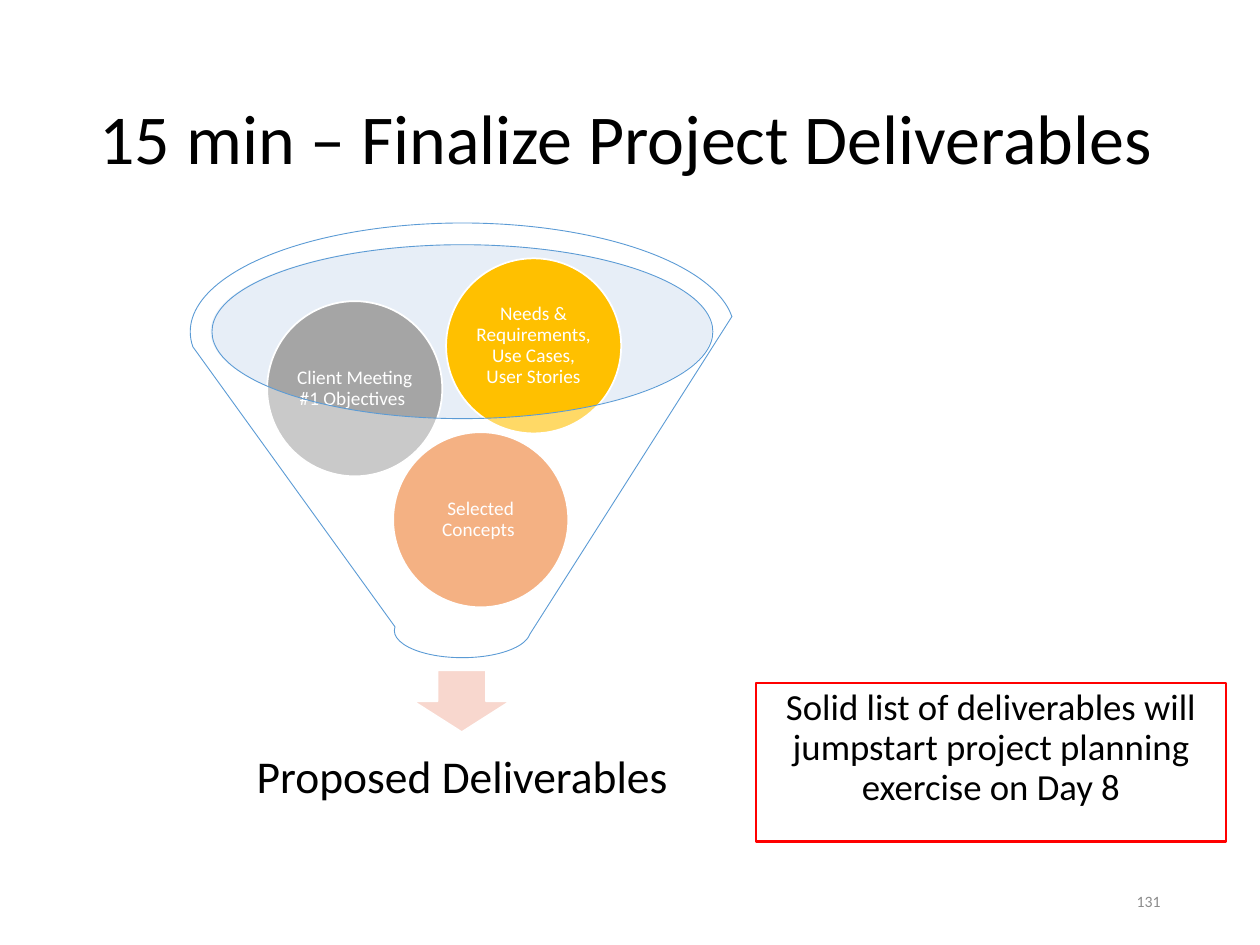
import dataclasses
import typing

import pptx
import pptx.dml.color
import pptx.enum.shapes
import pptx.enum.text
import pptx.oxml.ns
import pptx.util
from lxml import etree

Inches = pptx.util.Inches
Pt = pptx.util.Pt
RGBColor = pptx.dml.color.RGBColor
Shapes = pptx.enum.shapes.MSO_SHAPE
Align = pptx.enum.text.PP_ALIGN
Anchor = pptx.enum.text.MSO_ANCHOR
qn = pptx.oxml.ns.qn

BLACK = RGBColor(0x00, 0x00, 0x00)
WHITE = RGBColor(0xFF, 0xFF, 0xFF)
RED = RGBColor(0xFF, 0x00, 0x00)
GRAY = RGBColor(0xA5, 0xA5, 0xA5)
NUMBER_GRAY = RGBColor(0x8C, 0x8C, 0x8C)
ORANGE = RGBColor(0xED, 0x7D, 0x31)
GOLD = RGBColor(0xFF, 0xC0, 0x00)
PINK = RGBColor(0xF8, 0xD7, 0xCE)
PALE_BLUE = RGBColor(0xC4, 0xD5, 0xEB)
BLUE = RGBColor(0x5B, 0x9B, 0xD5)

CIRCLE_SIZE = 1.39
FUNNEL_OPACITY = 40


@dataclasses.dataclass(frozen=True)
class Area:
    left: float
    top: float
    width: float
    height: float


@dataclasses.dataclass(frozen=True)
class Circle:
    left: float
    top: float
    color: RGBColor
    text: str


CIRCLES = [
    Circle(3.12, 3.43, ORANGE, "Selected Concepts "),
    Circle(2.12, 2.39, GRAY, "Client Meeting #1 Objectives "),
    Circle(3.54, 2.05, GOLD, "Needs & Requirements, Use Cases, User Stories"),
]


def apply(target: typing.Any, formats: dict) -> None:
    for name, value in formats.items():
        setattr(target, name, value)


def place(shape, area: Area) -> None:
    apply(shape, {name: Inches(value) for name, value in dataclasses.asdict(area).items()})


def write(shape, text: str, size: float, color: RGBColor, alignment=Align.CENTER,
          anchor=Anchor.MIDDLE, inset: typing.Optional[float] = None,
          spacing: float = 0.9, before: float = 0) -> None:
    frame = shape.text_frame
    apply(frame, {
        "word_wrap": True,
        "auto_size": pptx.enum.text.MSO_AUTO_SIZE.NONE,
        "vertical_anchor": anchor,
    })
    if inset is not None:
        sides = ("left", "top", "right", "bottom")
        apply(frame, {f"margin_{side}": Inches(inset) for side in sides})
    para = frame.paragraphs[0]
    apply(para, {"alignment": alignment, "line_spacing": spacing, "space_before": Pt(before)})
    span = para.add_run()
    span.text = text
    apply(span.font, {"name": "Calibri", "size": Pt(size)})
    span.font.color.rgb = color


def outline(shape, color: typing.Optional[RGBColor], width: float) -> None:
    if color is None:
        shape.line.fill.background()
    else:
        shape.line.color.rgb = color
        shape.line.width = Pt(width)


def draw(slide, kind, area: Area, fill: RGBColor, line: typing.Optional[RGBColor] = None,
         width: float = 1, opacity: int = 100):
    shape = slide.shapes.add_shape(kind, 0, 0, 0, 0)
    place(shape, area)
    shape.shadow.inherit = False
    shape.fill.solid()
    shape.fill.fore_color.rgb = fill
    if opacity < 100:
        color = shape.fill._xPr.find(qn("a:solidFill"))[0]
        etree.SubElement(color, qn("a:alpha")).set("val", str(opacity * 1000))
    outline(shape, line, width)
    return shape


def add_label(slide, area: Area, text: str, size: float, color: RGBColor, **formats) -> None:
    box = slide.shapes.add_textbox(0, 0, 0, 0)
    place(box, area)
    write(box, text, size, color, **formats)


def add_heading(slide) -> None:
    title = slide.shapes.title
    place(title, Area(0.69, 0.4, 8.62, 1.45))
    write(title, "15 min – Finalize Project Deliverables", 40, BLACK, alignment=Align.LEFT)


def add_takeaway(slide) -> None:
    body = slide.placeholders[1]
    place(body, Area(6, 5.42, 3.73, 1.26))
    outline(body, RED, 1.5)
    write(body, "Solid list of deliverables will jumpstart project planning exercise on Day 8",
          21, BLACK, anchor=Anchor.TOP, before=7.5)
    properties = body.text_frame.paragraphs[0]._p.get_or_add_pPr()
    for name in ("marL", "indent"):
        properties.set(name, "0")
    etree.SubElement(properties, qn("a:buNone"))


def add_funnel(slide) -> None:
    draw(slide, Shapes.OVAL, Area(1.67, 1.94, 3.98, 1.38), PALE_BLUE, opacity=FUNNEL_OPACITY)
    draw(slide, Shapes.DOWN_ARROW, Area(3.28, 5.32, 0.77, 0.49), PINK, WHITE)
    add_label(slide, Area(1.82, 5.72, 3.7, 0.93), "Proposed Deliverables", 26, BLACK, inset=0.2)
    for circle in CIRCLES:
        area = Area(circle.left, circle.top, CIRCLE_SIZE, CIRCLE_SIZE)
        shape = draw(slide, Shapes.OVAL, area, circle.color, WHITE)
        write(shape, circle.text, 11, WHITE, inset=0.02)
    draw(slide, Shapes.FUNNEL, Area(1.51, 1.77, 4.32, 3.45), WHITE, BLUE, 0.5, FUNNEL_OPACITY)


def main() -> None:
    deck = pptx.Presentation()
    apply(deck, {"slide_width": Inches(10), "slide_height": Inches(7.5)})
    slide = deck.slides.add_slide(deck.slide_layouts[1])
    add_heading(slide)
    add_takeaway(slide)
    add_label(slide, Area(7.06, 6.95, 2.25, 0.4), "131", 9, NUMBER_GRAY,
              alignment=Align.RIGHT, spacing=1)
    add_funnel(slide)
    deck.save("out.pptx")


if __name__ == "__main__":
    main()
